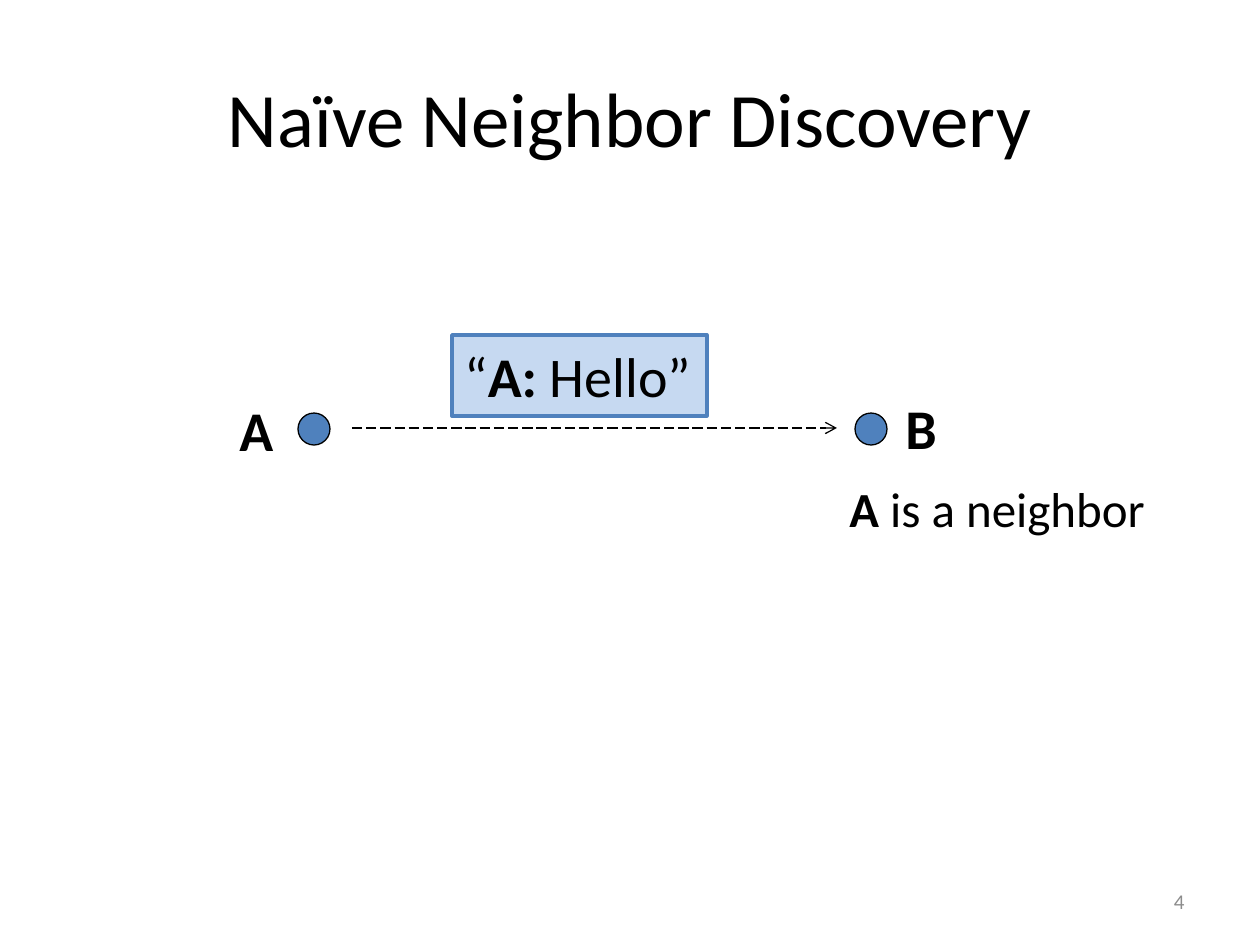
"""Build the naïve neighbor discovery slide."""
from lxml import etree
from pptx import Presentation, util as u
from pptx.dml.color import RGBColor
from pptx.enum import dml, shapes, text
from pptx.oxml.ns import qn

PX = 914400 / 126
FONT = "Calibri"
COLORS = {"ink": "000000", "blue": "4F81BD", "pale": "C6D9F1", "gray": "8C8C8C"}

TITLE = ("Naïve Neighbor Discovery", (63, 38, 1134, 158))
NODES = [(298, 413), (855, 413)]
NODE_SIZE = 32
LINK = (352, 428, 837, 428)
MESSAGE = ([("“", False), ("A: ", True), ("Hello”", False)], (452, 335, 255, 81))
LABELS = [
    ([("A", True)], (227, 389, 59, 81), 32),
    ([("B", True)], (893, 387, 57, 81), 32),
    ([("A ", True), ("is a neighbor", False)], (837, 472, 324, 72), 28),
]
PAGE = ([("4", False)], (903, 876, 294, 50))


def px(*lengths):
    return [u.Emu(round(n * PX)) for n in lengths]


def rgb(name):
    return RGBColor.from_string(COLORS[name])


def write(shape, runs, size, color="ink", align=text.PP_ALIGN.LEFT,
          anchor=text.MSO_ANCHOR.TOP, wrap=False):
    frame = shape.text_frame
    frame.word_wrap = wrap
    frame.vertical_anchor = anchor
    paragraph = frame.paragraphs[0]
    paragraph.alignment = align
    paragraph.font.name = FONT
    paragraph.font.size = u.Pt(size)
    paragraph.font.color.rgb = rgb(color)
    for words, bold in runs:
        run = paragraph.add_run()
        run.text = words
        run.font.bold = bold


def add_figure(slide, kind, box, fill, line, width):
    figure = slide.shapes.add_shape(kind, *px(*box))
    figure.shadow.inherit = False
    figure.fill.solid()
    figure.fill.fore_color.rgb = rgb(fill)
    figure.line.color.rgb = rgb(line)
    figure.line.width = u.Pt(width)
    return figure


def add_link(slide):
    link = slide.shapes.add_connector(shapes.MSO_CONNECTOR.STRAIGHT, *px(*LINK))
    link.line.color.rgb = rgb("ink")
    link.line.width = u.Pt(0.75)
    link.line.dash_style = dml.MSO_LINE.LONG_DASH
    properties = link._element.spPr
    etree.SubElement(properties.find(qn("a:ln")), qn("a:tailEnd"), type="arrow")
    etree.SubElement(properties, qn("a:effectLst"))


def main():
    deck = Presentation()
    deck.slide_width, deck.slide_height = u.Inches(10), u.Inches(7.5)
    slide = deck.slides.add_slide(deck.slide_layouts[5])

    words, box = TITLE
    title = slide.shapes.title
    title.left, title.top, title.width, title.height = px(*box)
    write(title, [(words, False)], 44, align=text.PP_ALIGN.CENTER,
          anchor=text.MSO_ANCHOR.MIDDLE, wrap=True)

    for left, top in NODES:
        add_figure(slide, shapes.MSO_SHAPE.OVAL, (left, top, NODE_SIZE, NODE_SIZE),
                   "blue", "ink", 0.75)
    add_link(slide)

    runs, box = MESSAGE
    message = add_figure(slide, shapes.MSO_SHAPE.RECTANGLE, box, "pale", "blue", 2)
    write(message, runs, 32)

    for runs, box, size in LABELS:
        write(slide.shapes.add_textbox(*px(*box)), runs, size)

    runs, box = PAGE
    write(slide.shapes.add_textbox(*px(*box)), runs, 12, "gray",
          text.PP_ALIGN.RIGHT, text.MSO_ANCHOR.MIDDLE, True)

    deck.save("out.pptx")


if __name__ == "__main__":
    main()
